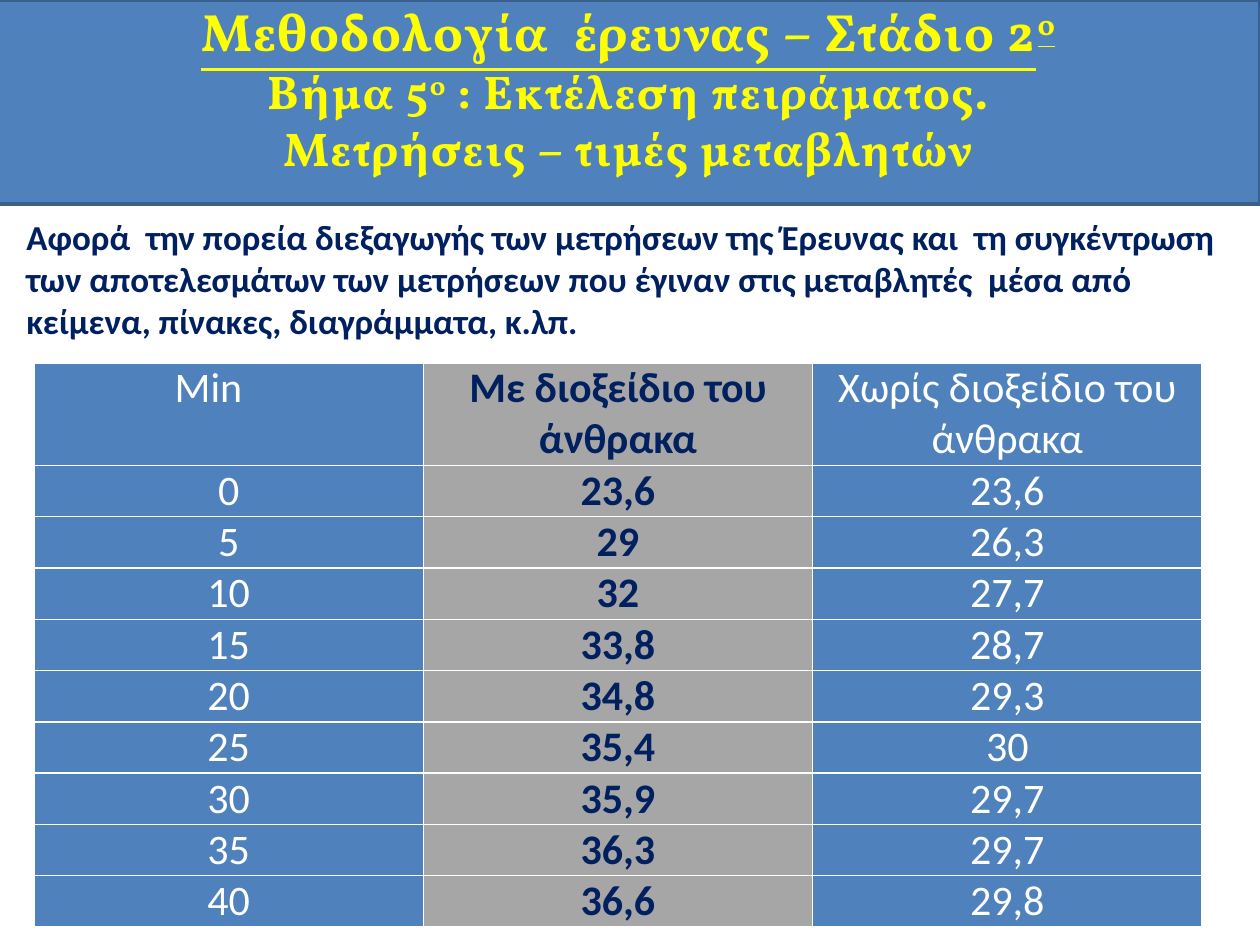
from dataclasses import dataclass

from lxml.etree import SubElement
from pptx import Presentation
from pptx.dml.color import RGBColor as Color
from pptx.enum.text import MSO_ANCHOR as Anchor, MSO_AUTO_SIZE as AutoSize, PP_ALIGN as Align
from pptx.oxml.ns import qn
from pptx.util import Inches, Pt


@dataclass(frozen=True)
class Theme:
    blue: Color = Color.from_string("4F81BD")
    blue_edge: Color = Color.from_string("3A5F8C")
    gray: Color = Color.from_string("A6A6A6")
    navy: Color = Color.from_string("002060")
    yellow: Color = Color.from_string("FFFF00")
    white: Color = Color.from_string("FFFFFF")
    title_font: str = "Vollkorn"
    body_font: str = "Calibri"
    heading: float = 30
    subheading: float = 27
    body: float = 20
    cell: float = 24


THEME = Theme()

TITLE_LINES = [
    [("Μεθοδολογία  έρευνας – Στάδιο 2", False), ("ο", True)],
    [("Βήμα 5", False), ("ο", True), (" : Εκτέλεση πειράματος.", False)],
    [("Μετρήσεις – τιμές μεταβλητών", False)],
]
INTRO = (
    "Αφορά  την πορεία διεξαγωγής των μετρήσεων της Έρευνας και  τη συγκέντρωση "
    "των αποτελεσμάτων των μετρήσεων που έγιναν στις μεταβλητές  μέσα από "
    "κείμενα, πίνακες, διαγράμματα, κ.λπ."
)
MEASUREMENTS = [
    ("Min", "Με διοξείδιο του άνθρακα", "Χωρίς διοξείδιο του άνθρακα"),
    ("0", "23,6", "23,6"),
    ("5", "29", "26,3"),
    ("10", "32", "27,7"),
    ("15", "33,8", "28,7"),
    ("20", "34,8", "29,3"),
    ("25", "35,4", "30"),
    ("30", "35,9", "29,7"),
    ("35", "36,3", "29,7"),
    ("40", "36,6", "29,8"),
]


def place(box, left, top, width, height):
    box.left, box.top = Inches(left), Inches(top)
    box.width, box.height = Inches(width), Inches(height)


def prepare_frame(frame):
    frame.word_wrap = True
    frame.auto_size = AutoSize.NONE
    frame.vertical_anchor = Anchor.TOP
    frame.margin_left = frame.margin_right = Inches(0.08)
    frame.margin_top = frame.margin_bottom = Inches(0.04)


def style_font(font, name, size, color, bold):
    font.name, font.size, font.bold = name, Pt(size), bold
    font.color.rgb = color


def fill_title(box):
    place(box, -0.03, 0, 10.03, 1.62)
    box.fill.solid()
    box.fill.fore_color.rgb = THEME.blue
    box.line.color.rgb = THEME.blue_edge
    box.line.width = Pt(2)
    frame = box.text_frame
    prepare_frame(frame)
    for index, pieces in enumerate(TITLE_LINES):
        para = frame.paragraphs[0] if index == 0 else frame.add_paragraph()
        para.alignment = Align.CENTER
        para.line_spacing = Pt(32.6)
        size = THEME.subheading if index else THEME.heading
        style_font(para.font, THEME.title_font, size, THEME.yellow, True)
        para.font.underline = index == 0
        for text, raised in pieces:
            span = para.add_run()
            span.text = text
            properties = span.font._element
            properties.set("spc", "80")
            if raised:
                properties.set("baseline", "30000")


def fill_intro(box):
    place(box, 0.13, 1.67, 9.87, 1.15)
    prepare_frame(box.text_frame)
    para = box.text_frame.paragraphs[0]
    para.text = INTRO
    para.space_before = Pt(0)
    style_font(para.font, THEME.body_font, THEME.body, THEME.navy, True)
    properties = para._p.get_or_add_pPr()
    properties.set("marL", "0")
    properties.set("indent", "0")
    properties.insert_element_before(
        properties.makeelement(qn("a:buNone")), "a:tabLst", "a:defRPr", "a:extLst"
    )


def add_borders(cell):
    properties = cell._tc.get_or_add_tcPr()
    for side in ("L", "R", "T", "B"):
        line = SubElement(properties, qn(f"a:ln{side}"), w=str(Pt(1)))
        fill = SubElement(line, qn("a:solidFill"))
        SubElement(fill, qn("a:srgbClr"), val=str(THEME.white))


def fill_cell(cell, text, highlighted):
    add_borders(cell)
    cell.fill.solid()
    cell.fill.fore_color.rgb = THEME.gray if highlighted else THEME.blue
    cell.margin_left = cell.margin_right = Inches(0.06)
    cell.margin_top = cell.margin_bottom = 0
    para = cell.text_frame.paragraphs[0]
    para.text = text
    para.alignment = Align.CENTER
    color = THEME.navy if highlighted else THEME.white
    style_font(para.font, THEME.body_font, THEME.cell, color, highlighted)


def add_measurements(page):
    rows, columns = len(MEASUREMENTS), len(MEASUREMENTS[0])
    table = page.shapes.add_table(
        rows, columns, Inches(0.27), Inches(2.88), Inches(9.27), Inches(4.44)
    ).table
    for column in table.columns:
        column.width = Inches(3.09)
    for row_index, values in enumerate(MEASUREMENTS):
        table.rows[row_index].height = Inches(0.4 if row_index else 0.79)
        for column_index, text in enumerate(values):
            fill_cell(table.cell(row_index, column_index), text, column_index == 1)
    table.cell(0, 0).margin_right = Inches(0.38)


def main():
    deck = Presentation()
    deck.slide_width, deck.slide_height = Inches(10), Inches(7.5)
    page = deck.slides.add_slide(deck.slide_layouts[1])
    fill_title(page.shapes.title)
    fill_intro(page.placeholders[1])
    add_measurements(page)
    deck.save("out.pptx")


if __name__ == "__main__":
    main()
